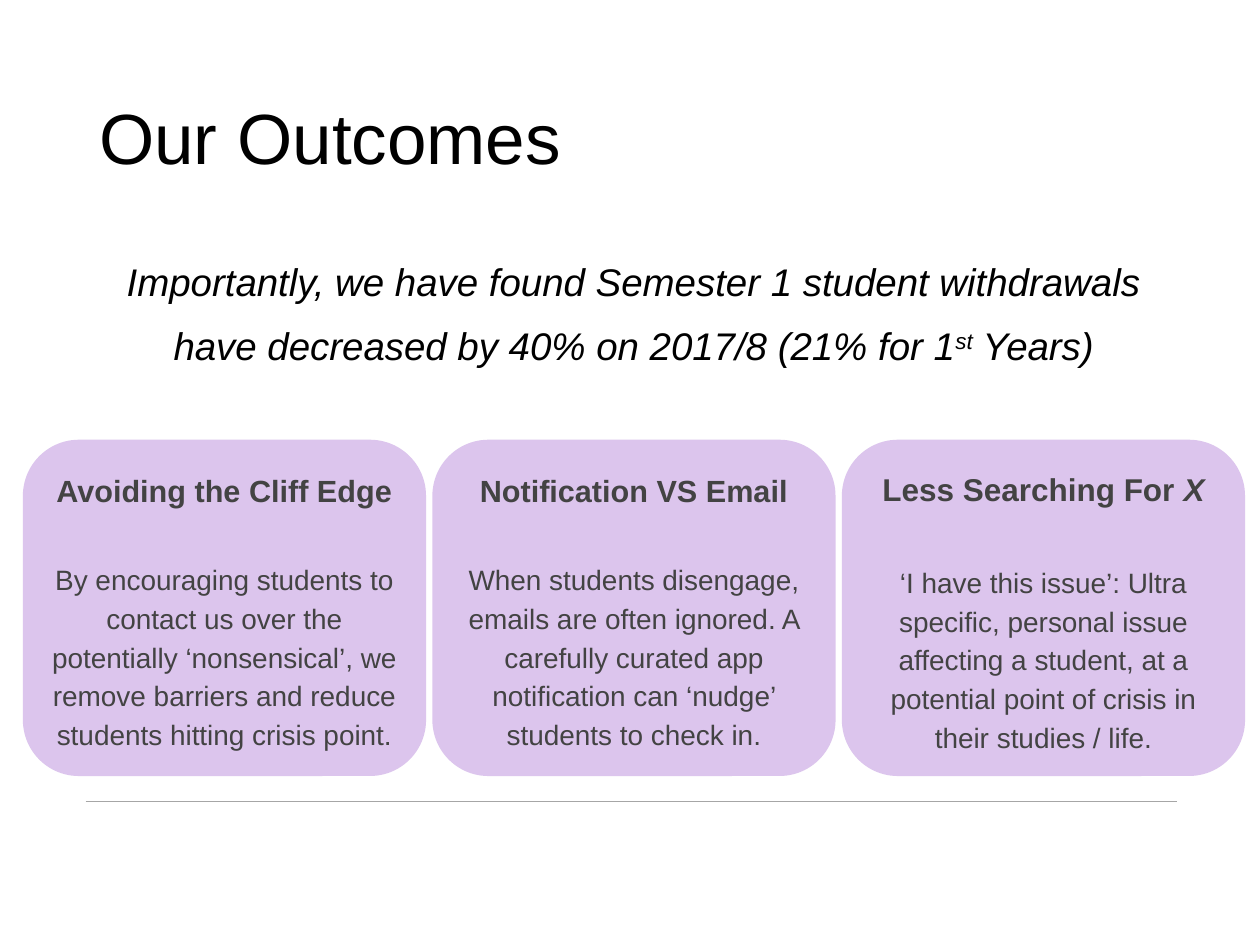
from dataclasses import dataclass

from lxml import etree
from pptx import Presentation
from pptx.dml.color import RGBColor
from pptx.enum import shapes, text
from pptx.oxml import ns
from pptx.util import Pt

BLACK = RGBColor(0x00, 0x00, 0x00)
CHARCOAL = RGBColor(0x43, 0x43, 0x43)
LILAC = RGBColor(0xDC, 0xC5, 0xED)
GREY = RGBColor(0xA6, 0xA6, 0xA6)
FONT = "Arial"

CARD_LEFT, CARD_TOP = 13.1, 251.3
CARD_W, CARD_H = 230.4, 192.2
CARD_PITCH = 234


@dataclass
class Card:
    heading: str
    body: str
    size: float = 17.5
    gap: float = 28
    italic_end: str = ""


CARDS = [
    Card("Avoiding the Cliff Edge",
         "By encouraging students to contact us over the potentially ‘nonsensical’, "
         "we remove barriers and reduce students hitting crisis point."),
    Card("Notification VS Email",
         "When students disengage, emails are often ignored. A carefully curated app "
         "notification can ‘nudge’ students to check in."),
    Card("Less Searching For ",
         "‘I have this issue’: Ultra specific, personal issue affecting a student, "
         "at a potential point of crisis in their studies / life.",
         size=18, gap=30.5, italic_end="X"),
]


def add_run(p, words: str, size: float, color: RGBColor,
            bold: bool = False, italic: bool = False):
    r = p.add_run()
    r.text = words
    f = r.font
    f.name, f.size, f.bold, f.italic = FONT, Pt(size), bold, italic
    f.color.rgb = color
    return r


def add_text_box(s, left: float, top: float, width: float, height: float,
                 anchor: text.MSO_ANCHOR):
    """Add a wrapping text box and return its first paragraph."""
    tf = s.shapes.add_textbox(Pt(left), Pt(top), Pt(width), Pt(height)).text_frame
    tf.word_wrap = True
    tf.vertical_anchor = anchor
    return tf.paragraphs[0]


def add_rule(s) -> None:
    line = s.shapes.add_connector(shapes.MSO_CONNECTOR.STRAIGHT,
                                  Pt(49), Pt(457.9), Pt(672.5), Pt(457.9))
    line.line.color.rgb = GREY
    line.line.width = Pt(0.5)
    etree.SubElement(line._element.spPr, ns.qn("a:effectLst"))


def add_card(s, card: Card, left: float) -> None:
    sp = s.shapes.add_shape(shapes.MSO_SHAPE.ROUNDED_RECTANGLE,
                            Pt(left), Pt(CARD_TOP), Pt(CARD_W), Pt(CARD_H))
    sp.shadow.inherit = False
    sp.fill.solid()
    sp.fill.fore_color.rgb = LILAC
    sp.line.fill.background()
    tf = sp.text_frame
    tf.word_wrap = True
    tf.vertical_anchor = text.MSO_ANCHOR.MIDDLE
    tf.margin_left = tf.margin_right = tf.margin_top = tf.margin_bottom = Pt(7.2)

    p = tf.paragraphs[0]
    p.alignment, p.line_spacing = text.PP_ALIGN.CENTER, 1.2
    add_run(p, card.heading, card.size, CHARCOAL, bold=True)
    if card.italic_end:
        add_run(p, card.italic_end, card.size, CHARCOAL, bold=True, italic=True)

    p = tf.add_paragraph()
    p.alignment, p.line_spacing = text.PP_ALIGN.CENTER, 1.15
    p.space_before = Pt(card.gap)
    add_run(p, card.body, 16, CHARCOAL)


def main() -> None:
    prs = Presentation()
    prs.slide_width, prs.slide_height = Pt(720), Pt(540)
    s = prs.slides.add_slide(prs.slide_layouts[6])

    add_rule(s)

    p = add_text_box(s, 49.7, 28.8, 620.6, 104.4, text.MSO_ANCHOR.MIDDLE)
    p.line_spacing = 0.9
    add_run(p, "Our Outcomes", 40.6, BLACK)

    p = add_text_box(s, 51.8, 133.2, 620.6, 97.9, text.MSO_ANCHOR.TOP)
    p.alignment, p.line_spacing = text.PP_ALIGN.CENTER, 1.4
    add_run(p, "Importantly, we have found Semester 1 student withdrawals have "
               "decreased by 40% on 2017/8 (21% for 1", 22, BLACK, italic=True)
    ordinal = add_run(p, "st", 22, BLACK, italic=True)
    ordinal.font._element.set("baseline", "30000")
    add_run(p, " Years)", 22, BLACK, italic=True)

    for i, card in enumerate(CARDS):
        add_card(s, card, CARD_LEFT + i * CARD_PITCH)

    prs.save("out.pptx")


if __name__ == "__main__":
    main()
